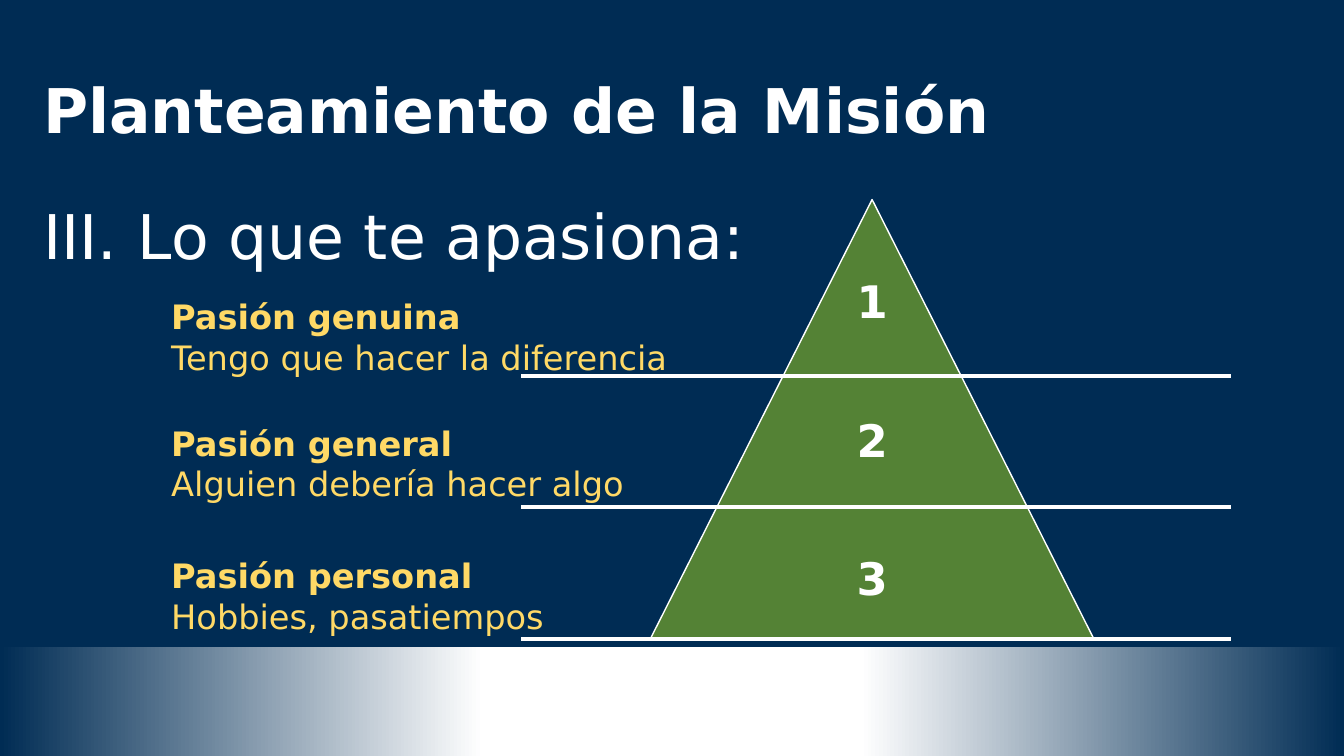
from dataclasses import dataclass

from lxml import etree
from pptx import Presentation
from pptx.dml.color import RGBColor
from pptx.enum.shapes import MSO_CONNECTOR, MSO_SHAPE
from pptx.enum.text import MSO_ANCHOR, PP_ALIGN
from pptx.oxml.ns import qn
from pptx.util import Inches, Pt

STRAIGHT = MSO_CONNECTOR.STRAIGHT
RECTANGLE, TRIANGLE = MSO_SHAPE.RECTANGLE, MSO_SHAPE.ISOSCELES_TRIANGLE
TOP, MIDDLE = MSO_ANCHOR.TOP, MSO_ANCHOR.MIDDLE
LEFT, CENTER = PP_ALIGN.LEFT, PP_ALIGN.CENTER

FONT = "DejaVu Sans"
NAVY, WHITE, GREEN, GOLD = "002C54", "FFFFFF", "548235", "FFD966"
BAND_STOPS = [(0, NAVY), (36, WHITE), (50, WHITE), (64, WHITE), (100, NAVY)]
NUMBER_GAP = 60.5  # points between the level numbers


@dataclass
class Level:
    number: str
    passion: str
    meaning: str
    base: float  # inches from the top of the slide
    gap: float  # points above the passion


@dataclass
class Line:
    text: str
    size: float
    color: str = WHITE
    bold: bool = False
    before: float = 0
    spacing: float = 1.0
    align: PP_ALIGN = LEFT
    roman_start: int = 0


LEVELS = [
    Level("1", "Pasión genuina", "Tengo que hacer la diferencia", 3.73, 0),
    Level("2", "Pasión general", "Alguien debería hacer algo", 5.03, 32.6),
    Level("3", "Pasión personal", "Hobbies, pasatiempos", 6.34, 37.25),
]


def rgb(color: str) -> RGBColor:
    return RGBColor.from_string(color)


def add_preset(slide, preset, left: float, top: float, width: float, height: float):
    shape = slide.shapes.add_shape(
        preset, Inches(left), Inches(top), Inches(width), Inches(height))
    shape.shadow.inherit = False
    return shape


def fill_gradient(shape, stops: list[tuple[int, str]]) -> None:
    shape.fill.gradient()
    shape.fill.gradient_angle = 0
    stop_list = shape.fill._fill._gradFill.find(qn("a:gsLst"))
    for stop in list(stop_list):
        stop_list.remove(stop)
    for percent, color in stops:
        stop = etree.SubElement(stop_list, qn("a:gs"), pos=str(percent * 1000))
        etree.SubElement(stop, qn("a:srgbClr"), val=color)


def add_text(slide, left: float, top: float, width: float, height: float,
             lines: list[Line], anchor: MSO_ANCHOR = TOP) -> None:
    frame = slide.shapes.add_textbox(
        Inches(left), Inches(top), Inches(width), Inches(height)).text_frame
    frame.word_wrap = True
    frame.vertical_anchor = anchor
    for index, line in enumerate(lines):
        paragraph = frame.add_paragraph() if index else frame.paragraphs[0]
        if line.roman_start:
            properties = paragraph._p.get_or_add_pPr()
            properties.set("marL", str(Inches(0.94)))
            properties.set("indent", str(Inches(-0.94)))
            etree.SubElement(properties, qn("a:buFont"), typeface=FONT)
            etree.SubElement(properties, qn("a:buAutoNum"),
                             type="romanUcPeriod", startAt=str(line.roman_start))
        paragraph.alignment = line.align
        paragraph.line_spacing = line.spacing
        if line.before:
            paragraph.space_before = Pt(line.before)
        run = paragraph.add_run()
        run.text = line.text
        run.font.name = FONT
        run.font.size = Pt(line.size)
        run.font.bold = line.bold
        run.font.color.rgb = rgb(line.color)


def add_rule(slide, left: float, right: float, y: float) -> None:
    rule = slide.shapes.add_connector(
        STRAIGHT, Inches(left), Inches(y), Inches(right), Inches(y))
    rule.line.color.rgb = rgb(WHITE)
    rule.line.width = Pt(3)
    etree.SubElement(rule._element.spPr, qn("a:effectLst"))


def main() -> None:
    deck = Presentation()
    deck.slide_width, deck.slide_height = Inches(13.33), Inches(7.5)
    slide = deck.slides.add_slide(deck.slide_layouts[6])

    # Background and bottom band
    slide.background.fill.solid()
    slide.background.fill.fore_color.rgb = rgb(NAVY)
    band = add_preset(slide, RECTANGLE, 0, 6.42, 13.33, 1.08)
    fill_gradient(band, BAND_STOPS)
    band.line.fill.background()

    # Title and numbered heading
    add_text(slide, 0.33, 0.4, 12.67, 1.45,
             [Line("Planteamiento de la Misión", 44, bold=True, spacing=0.9)], MIDDLE)
    add_text(slide, 0.33, 2, 12.67, 4.56,
             [Line("Lo que te apasiona:", 44, spacing=0.9, roman_start=3)])

    # Meaning of each level
    meanings = []
    for level in LEVELS:
        meanings.append(Line(level.passion, 24, GOLD, bold=True, before=level.gap))
        meanings.append(Line(level.meaning, 24, GOLD))
    add_text(slide, 1.6, 2.89, 5.29, 3.6, meanings)

    # Pyramid with its numbers and level lines
    pyramid = add_preset(slide, TRIANGLE, 6.45, 1.98, 4.4, 4.36)
    pyramid.fill.solid()
    pyramid.fill.fore_color.rgb = rgb(GREEN)
    pyramid.line.color.rgb = rgb(WHITE)
    pyramid.line.width = Pt(1)
    numbers = [Line(level.number, 32, bold=True, align=CENTER,
                    before=NUMBER_GAP if index else 0)
               for index, level in enumerate(LEVELS)]
    add_text(slide, 8.27, 2.67, 0.76, 3.47, numbers)
    for level in LEVELS:
        add_rule(slide, 5.17, 12.21, level.base)

    deck.save("out.pptx")


if __name__ == "__main__":
    main()
